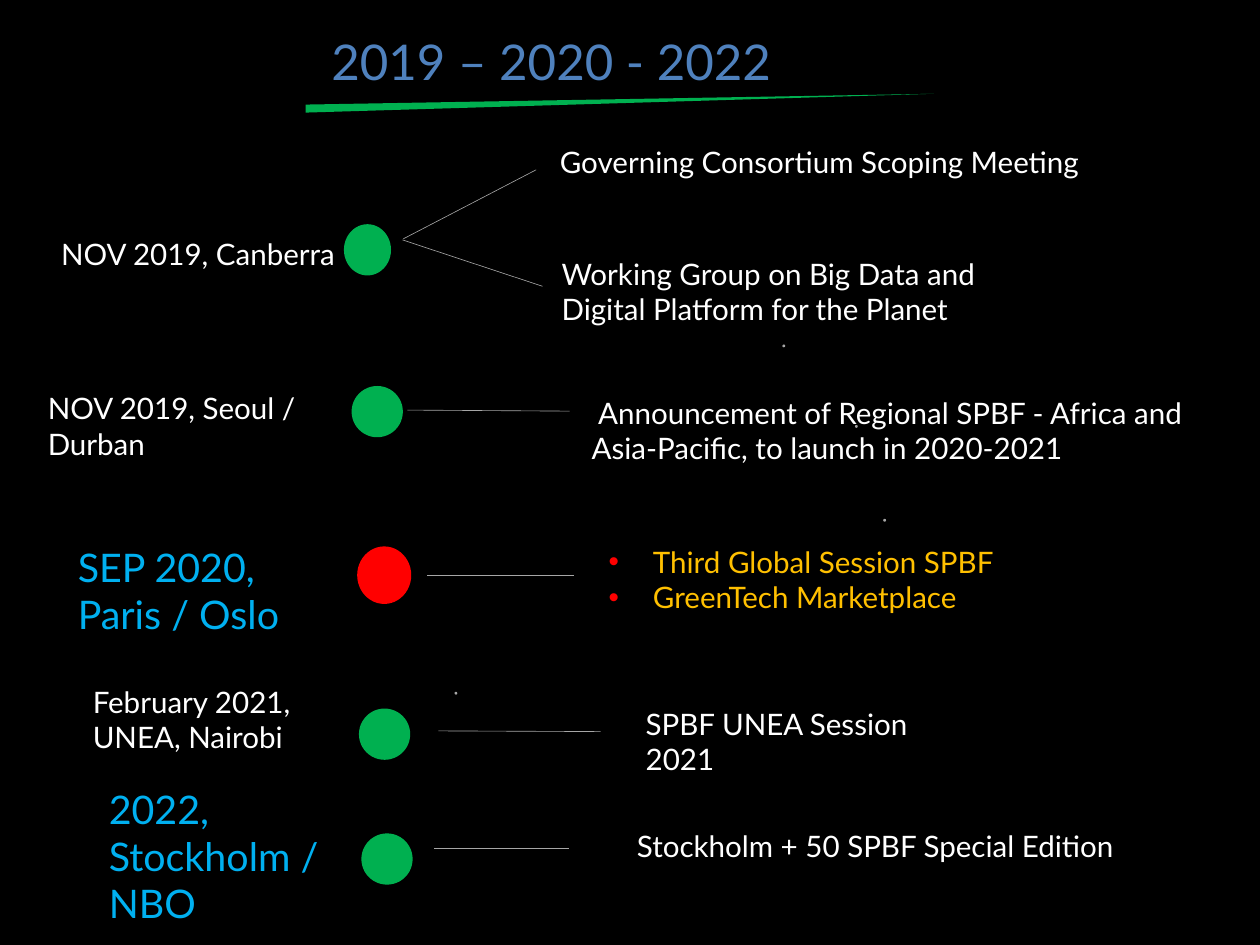
from dataclasses import dataclass

from lxml import etree
from pptx import Presentation
from pptx.dml.color import RGBColor
from pptx.enum import shapes, text
from pptx.oxml import ns
from pptx.util import Cm, Pt

BLACK = RGBColor(0x00, 0x00, 0x00)
WHITE = RGBColor(0xFF, 0xFF, 0xFF)
GREY = RGBColor(0xA6, 0xA6, 0xA6)
GREEN = RGBColor(0x00, 0xB0, 0x50)
RED = RGBColor(0xFF, 0x00, 0x00)
GOLD = RGBColor(0xFF, 0xC0, 0x00)
SKY = RGBColor(0x00, 0xB0, 0xF0)
TITLE_BLUE = RGBColor(0x4F, 0x81, 0xBD)
FONT = "Lato"
SPECK_SIZE = 0.08
SPECKS = [(22.43, 9.88), (24.51, 12.19), (25.32, 14.88), (13.03, 19.84)]


@dataclass
class Detail:
    """Lines of text; box is left, top, width, height, with top relative to the row."""
    lines: list
    box: tuple
    color: RGBColor = WHITE
    size: int = 24
    bullet: bool = False
    first_indent: float = 0


@dataclass
class Milestone:
    """One row, in cm; all heights are measured from the top of its dot."""
    top: float
    dot: tuple  # left, width, height
    label: Detail
    links: list  # x1, y1, x2, y2
    details: list
    dot_color: RGBColor = GREEN


MILESTONES = [
    Milestone(6.43, (9.86, 1.35, 1.47),
              Detail(["NOV 2019, Canberra"], (1.5, 0.2, 8.94, 1.27)),
              [(11.56, 0.42, 15.37, -1.56), (11.54, 0.45, 15.55, 1.78)],
              [Detail(["Governing Consortium Scoping Meeting"], (15.8, -2.42, 16.46, 1.27)),
               Detail(["Working Group on Big Data and Digital Platform for the Planet"],
                      (15.85, 0.78, 14.05, 2.31))]),
    Milestone(11.07, (10.08, 1.47, 1.47),
              Detail(["NOV 2019, Seoul / Durban"], (1.12, 0, 9.09, 2.31)),
              [(11.68, 0.69, 16.33, 0.72)],
              [Detail(["Announcement of Regional SPBF - Africa and Asia-Pacific, "
                       "to launch in 2020-2021"],
                      (16.71, 0.13, 18.34, 2.31), first_indent=0.19)]),
    Milestone(15.67, (10.24, 1.55, 1.65),
              Detail(["SEP 2020, Paris / Oslo"], (1.98, -0.23, 8.13, 3), SKY, 32),
              [(12.25, 0.84, 16.45, 0.84)],
              [Detail(["Third Global Session SPBF", "GreenTech Marketplace"],
                      (17.2, -0.2, 16.23, 2.31), GOLD, bullet=True)],
              RED),
    Milestone(20.32, (10.29, 1.47, 1.47),
              Detail(["February 2021, UNEA, Nairobi"], (2.41, -0.84, 8.13, 2.9)),
              [(12.57, 0.64, 17.22, 0.66)],
              [Detail(["SPBF UNEA Session", "2021"], (18.26, -0.2, 11.86, 2.31))]),
    Milestone(23.9, (10.36, 1.47, 1.47),
              Detail(["2022, Stockholm / NBO"], (2.87, -1.52, 7.19, 4.6), SKY, 32),
              [(12.45, 0.43, 16.31, 0.43)],
              [Detail(["Stockholm + 50 SPBF Special Edition"], (18.01, -0.28, 14.81, 1.27))]),
]


def paint(shape, color):
    shape.shadow.inherit = False
    shape.fill.solid()
    shape.fill.fore_color.rgb = color
    shape.line.fill.background()


def add_dot(slide, left, top, width, height, color):
    dot = slide.shapes.add_shape(shapes.MSO_SHAPE.OVAL,
                                 Cm(left), Cm(top), Cm(width), Cm(height))
    paint(dot, color)


def add_link(slide, x1, y1, x2, y2):
    link = slide.shapes.add_connector(shapes.MSO_CONNECTOR.STRAIGHT,
                                      Cm(x1), Cm(y1), Cm(x2), Cm(y2))
    link.line.color.rgb = GREY
    link.line.width = Pt(0.5)
    etree.SubElement(link._element.spPr, ns.qn("a:effectLst"))


def set_bullet(paragraph):
    properties = paragraph._p.get_or_add_pPr()
    properties.set("marL", str(Cm(1.27)))
    properties.set("indent", str(-Cm(1.27)))
    bullet_color = etree.SubElement(properties, ns.qn("a:buClr"))
    etree.SubElement(bullet_color, ns.qn("a:srgbClr"), val=str(RED))
    etree.SubElement(properties, ns.qn("a:buFont"), typeface="Arial")
    etree.SubElement(properties, ns.qn("a:buChar"), char="•")


def add_text(slide, detail, row_top=0):
    left, top, width, height = detail.box
    frame = slide.shapes.add_textbox(Cm(left), Cm(row_top + top),
                                     Cm(width), Cm(height)).text_frame
    frame.word_wrap = True
    frame.vertical_anchor = text.MSO_ANCHOR.TOP
    frame.text = "\n".join(detail.lines)
    for paragraph in frame.paragraphs:
        paragraph.font.name = FONT
        paragraph.font.size = Pt(detail.size)
        paragraph.font.color.rgb = detail.color
        if detail.bullet:
            set_bullet(paragraph)
        elif detail.first_indent:
            paragraph._p.get_or_add_pPr().set("indent", str(Cm(detail.first_indent)))
    return frame


def add_heading(slide, left, top, width):
    """Title with the tapering rule below it."""
    frame = add_text(slide, Detail(["2019 – 2020 - 2022"], (left + 0.74, top, 13.64, 1.75),
                                   TITLE_BLUE, 40))
    frame.margin_left = frame.margin_right = frame.margin_top = frame.margin_bottom = 0
    rule_top = top + 1.8
    builder = slide.shapes.build_freeform(Cm(left + width), Cm(rule_top))
    builder.add_line_segments([(Cm(left), Cm(rule_top + 0.31)),
                               (Cm(left), Cm(rule_top + 0.54))], close=True)
    paint(builder.convert_to_shape(), GREEN)


def add_milestone(slide, milestone):
    top = milestone.top
    left, width, height = milestone.dot
    add_dot(slide, left, top, width, height, milestone.dot_color)
    for x1, y1, x2, y2 in milestone.links:
        add_link(slide, x1, top + y1, x2, top + y2)
    for detail in [milestone.label, *milestone.details]:
        add_text(slide, detail, top)


def main():
    presentation = Presentation()
    presentation.slide_width = Cm(36.12)
    presentation.slide_height = Cm(27.1)
    slide = presentation.slides.add_slide(presentation.slide_layouts[6])
    slide.background.fill.solid()
    slide.background.fill.fore_color.rgb = BLACK
    add_heading(slide, 8.76, 0.89, 18.01)
    for left, top in SPECKS:
        add_dot(slide, left, top, SPECK_SIZE, SPECK_SIZE, GREY)
    for milestone in MILESTONES:
        add_milestone(slide, milestone)
    presentation.save("out.pptx")


if __name__ == "__main__":
    main()
